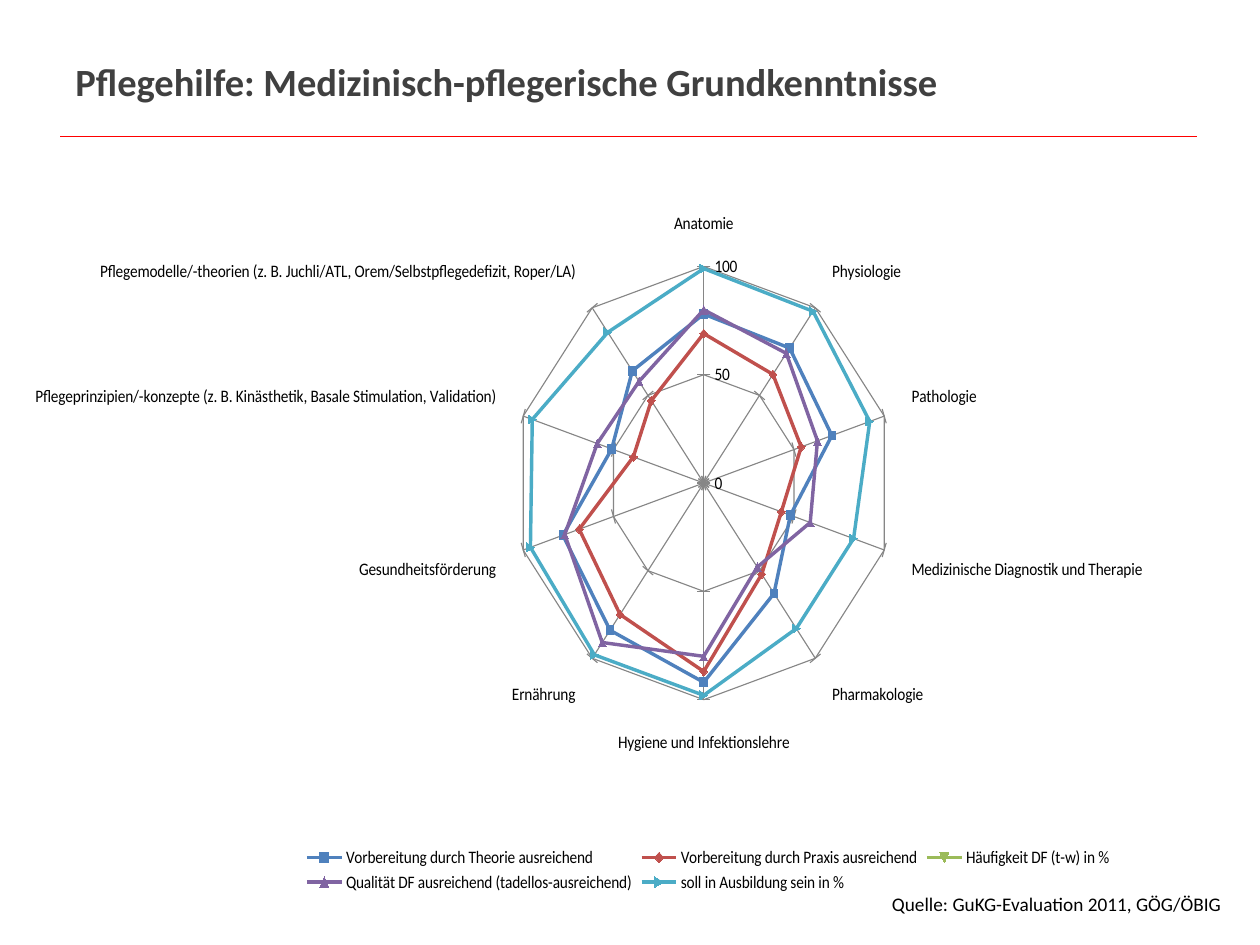
from dataclasses import dataclass

from lxml import etree
from pptx import Presentation
from pptx import util as u
from pptx.chart.data import CategoryChartData
from pptx.dml.color import RGBColor
from pptx.enum import chart as ch
from pptx.enum import shapes, text
from pptx.oxml import parse_xml
from pptx.oxml.ns import nsdecls, qn


@dataclass(frozen=True)
class Theme:
    font: str = "Calibri"
    ink: str = "000000"
    title: str = "404040"
    rule: str = "FF0000"
    grid: str = "868686"
    large: int = 22
    note: int = 11
    small: int = 10
    lines: tuple = ("4F81BD", "C0504D", "9BBB59", "8064A2", "4BACC6")


TOPICS = (
    "Anatomie",
    "Physiologie",
    "Pathologie",
    "Medizinische Diagnostik und Therapie",
    "Pharmakologie",
    "Hygiene und Infektionslehre",
    "Ernährung",
    "Gesundheitsförderung",
    "Pflegeprinzipien/-konzepte (z. B. Kinästhetik, Basale Stimulation, Validation)",
    "Pflegemodelle/-theorien (z. B. Juchli/ATL, Orem/Selbstpflegedefizit, Roper/LA)",
)
RATINGS = {
    "Vorbereitung durch Theorie ausreichend": (78, 77, 71, 48, 63, 92, 84, 78, 51, 64),
    "Vorbereitung durch Praxis ausreichend": (69, 62, 54, 43, 52, 87, 75, 69, 39, 47),
    "Häufigkeit DF (t-w) in %": (None,) * len(TOPICS),
    "Qualität DF ausreichend (tadellos-ausreichend)": (80, 74, 63, 59, 48, 80, 91, 77, 59, 58),
    "soll in Ausbildung sein in %": (99, 98, 92, 83, 83, 98, 98, 96, 95, 86),
}


def box(*sides):
    return [u.Inches(side) for side in sides]


def stroke(line, color, width):
    line.color.rgb = RGBColor.from_string(color)
    line.width = u.Pt(width)


def style(font, theme, size, color, bold=False):
    font.name = theme.font
    font.size = u.Pt(size)
    font.bold = bold
    font.color.rgb = RGBColor.from_string(color)


class Sheet:
    def __init__(self, slide, theme):
        self.slide = slide
        self.theme = theme

    def label(self, words, at, size, color, bold=False, wrap=True, anchor="TOP"):
        frame = self.slide.shapes.add_textbox(*box(*at)).text_frame
        frame.word_wrap = wrap
        frame.vertical_anchor = text.MSO_ANCHOR[anchor]
        run = frame.paragraphs[0].add_run()
        run.text = words
        style(run.font, self.theme, size, color, bold)

    def rule(self, start, end):
        line = self.slide.shapes.add_connector(
            shapes.MSO_CONNECTOR.STRAIGHT, *box(*start, *end))
        stroke(line.line, self.theme.rule, 0.25)
        etree.SubElement(line.element.spPr, qn("a:effectLst"))

    def radar(self, topics, ratings, at, plot):
        data = CategoryChartData()
        data.categories = topics
        for name, values in ratings.items():
            data.add_series(name, values)
        chart = self.slide.shapes.add_chart(
            ch.XL_CHART_TYPE.RADAR_MARKERS, *box(*at), data).chart
        style(chart.font, self.theme, self.theme.small, self.theme.ink)
        chart.has_title = False
        chart.has_legend = True
        chart.legend.position = ch.XL_LEGEND_POSITION.BOTTOM
        chart.legend.include_in_layout = False
        chart.plots[0].vary_by_categories = False
        for line, color in zip(chart.plots[0].series, self.theme.lines):
            line.smooth = False
            stroke(line.format.line, color, 2.25)
        self.axes(chart)
        self.place(chart, plot)

    def axes(self, chart):
        scale = chart.value_axis
        scale.minimum_scale = 0
        scale.maximum_scale = 100
        scale.major_unit = 50
        scale.major_tick_mark = ch.XL_TICK_MARK.CROSS
        scale.tick_labels.number_format = "General"
        scale.tick_labels.number_format_is_linked = False
        chart.category_axis.major_tick_mark = ch.XL_TICK_MARK.OUTSIDE
        for axis in (chart.category_axis, scale):
            axis.has_major_gridlines = True
            stroke(axis.major_gridlines.format.line, self.theme.grid, 0.75)
            stroke(axis.format.line, self.theme.grid, 0.75)

    def place(self, chart, plot):
        """Fix the inner plot area, given as fractions of the chart."""
        sizes = "".join(f'<c:{key} val="{part}"/>' for key, part in zip("xywh", plot))
        layout = parse_xml(
            f'<c:layout {nsdecls("c")}><c:manualLayout><c:layoutTarget val="inner"/>'
            f'<c:xMode val="edge"/><c:yMode val="edge"/>{sizes}'
            "</c:manualLayout></c:layout>")
        area = chart.element.find(".//" + qn("c:plotArea"))
        old = area.find(qn("c:layout"))
        if old is not None:
            area.remove(old)
        area.insert(0, layout)


def main():
    deck = Presentation()
    deck.slide_width, deck.slide_height = box(10, 7.5)
    theme = Theme()
    sheet = Sheet(deck.slides.add_slide(deck.slide_layouts[6]), theme)
    sheet.rule((0.48, 1.08), (9.5, 1.08))
    sheet.radar(TOPICS, RATINGS, (0.28, 0.13, 9.5, 6.99), (0.315, 0.25, 0.362, 0.56))
    sheet.label("Pflegehilfe: Medizinisch-pflegerische Grundkenntnisse",
                (0.5, 0.3, 9, 0.69), theme.large, theme.title, bold=True, anchor="MIDDLE")
    sheet.label("Quelle: GuKG-Evaluation 2011, GÖG/ÖBIG",
                (6.98, 7.03, 2.85, 0.29), theme.note, theme.ink, wrap=False)
    deck.save("out.pptx")


if __name__ == "__main__":
    main()
